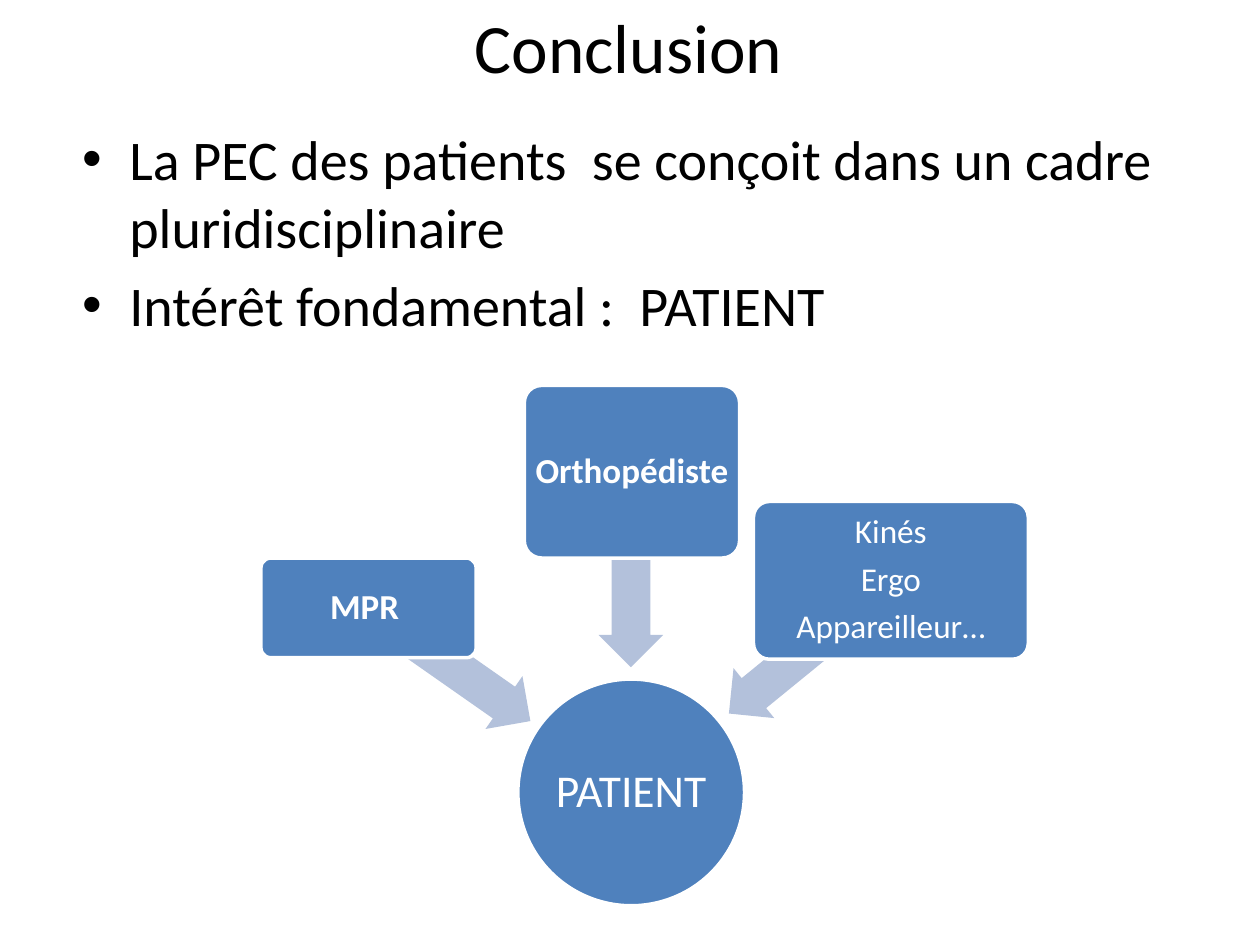
import pptx
import pptx.util
import pptx.dml.color
import pptx.enum.shapes
import pptx.enum.text

COLOURS = {"ink": "000000", "white": "FFFFFF", "blue": "4F81BD", "arrow": "B3C1DB"}
SHAPES = pptx.enum.shapes.MSO_SHAPE
ARROW_HEIGHT = 1.3
ROLES = [
    {"arrow": (7.09, 12.75, 3.96), "angle": 215, "box": (5.26, 11.25, 4.34, 2.01),
     "lines": ["MPR "], "size": 20, "bold": True},
    {"arrow": (10.74, 10.82, 3.96), "angle": 270, "box": (10.57, 7.77, 4.34, 3.48),
     "lines": ["Orthopédiste "], "size": 20, "bold": True},
    {"arrow": (14.22, 12.4, 4.22), "angle": 320.8, "box": (15.19, 10.11, 5.54, 3.18),
     "lines": ["Kinés", "Ergo", "Appareilleur…"], "size": 19, "bold": False},
]


def rgb(name):
    """Return the named colour."""
    return pptx.dml.color.RGBColor.from_string(COLOURS[name])


def apply(target, values):
    """Set attributes of the target from a dict."""
    for name, value in values.items():
        setattr(target, name, value)


def lengths(place):
    """Convert centimetres to slide lengths."""
    return [pptx.util.Cm(value) for value in place]


def write_lines(frame, lines, size, colour, bold=False, **layout):
    """Write one formatted paragraph for each line."""
    for index, line in enumerate(lines):
        para = frame.add_paragraph() if index else frame.paragraphs[0]
        apply(para, layout)
        if not index:
            para.space_before = pptx.util.Pt(0)
        span = para.add_run()
        span.text = line
        apply(span.font, {"name": "Calibri", "size": pptx.util.Pt(size), "bold": bold})
        span.font.color.rgb = rgb(colour)


def fill_placeholder(holder, place, lines, size, **layout):
    """Move a placeholder and write its text."""
    apply(holder, dict(zip(("left", "top", "width", "height"), lengths(place))))
    holder.text_frame.auto_size = pptx.enum.text.MSO_AUTO_SIZE.NONE
    write_lines(holder.text_frame, lines, size, "ink", **layout)


def add_plain_shape(page, kind, place, colour, adjustments=()):
    """Add a filled shape without shadow."""
    shape = page.shapes.add_shape(kind, *lengths(place))
    shape.shadow.inherit = False
    shape.fill.solid()
    shape.fill.fore_color.rgb = rgb(colour)
    shape.line.fill.background()
    for index, value in enumerate(adjustments):
        shape.adjustments[index] = value
    return shape


def add_node(page, kind, place, lines, size, bold=False, adjustments=(), margin=0.1):
    """Add a blue node with a white outline and centred text."""
    node = add_plain_shape(page, kind, place, "blue", adjustments)
    node.line.color.rgb = rgb("white")
    node.line.width = pptx.util.Pt(2)
    margins = ("margin_left", "margin_top", "margin_right", "margin_bottom")
    apply(node.text_frame, dict.fromkeys(margins, pptx.util.Cm(margin)))
    apply(node.text_frame, {"word_wrap": True,
                            "vertical_anchor": pptx.enum.text.MSO_ANCHOR.MIDDLE})
    write_lines(node.text_frame, lines, size, "white", bold,
                alignment=pptx.enum.text.PP_ALIGN.CENTER,
                line_spacing=0.9, space_after=pptx.util.Pt(0.35 * size))


def add_role(page, role):
    """Add a care role and its arrow towards the patient."""
    left, top, width = role["arrow"]
    arrow = add_plain_shape(page, SHAPES.LEFT_ARROW, (left, top, width, ARROW_HEIGHT),
                            "arrow", (0.6, 0.5))
    arrow.rotation = role["angle"]
    add_node(page, SHAPES.ROUNDED_RECTANGLE, role["box"], role["lines"],
             role["size"], role["bold"], (0.1,))


def main():
    """Build the conclusion slide."""
    deck = pptx.Presentation()
    apply(deck, {"slide_width": pptx.util.Cm(25.4), "slide_height": pptx.util.Cm(19.05)})
    page = deck.slides.add_slide(deck.slide_layouts[1])
    fill_placeholder(page.shapes.title, (1.4, 0, 22.86, 1.83), ["Conclusion "], 39.6,
                     alignment=pptx.enum.text.PP_ALIGN.CENTER)
    fill_placeholder(page.placeholders[1], (1.4, 2.39, 23.01, 4.55),
                     ["La PEC des patients  se conçoit dans un cadre pluridisciplinaire",
                      "Intérêt fondamental :  PATIENT"], 32,
                     space_before=pptx.util.Pt(6.4))
    add_node(page, SHAPES.OVAL, (10.44, 13.69, 4.57, 4.57), ["PATIENT"], 26, margin=0)
    for role in ROLES:
        add_role(page, role)
    deck.save("out.pptx")


if __name__ == "__main__":
    main()
